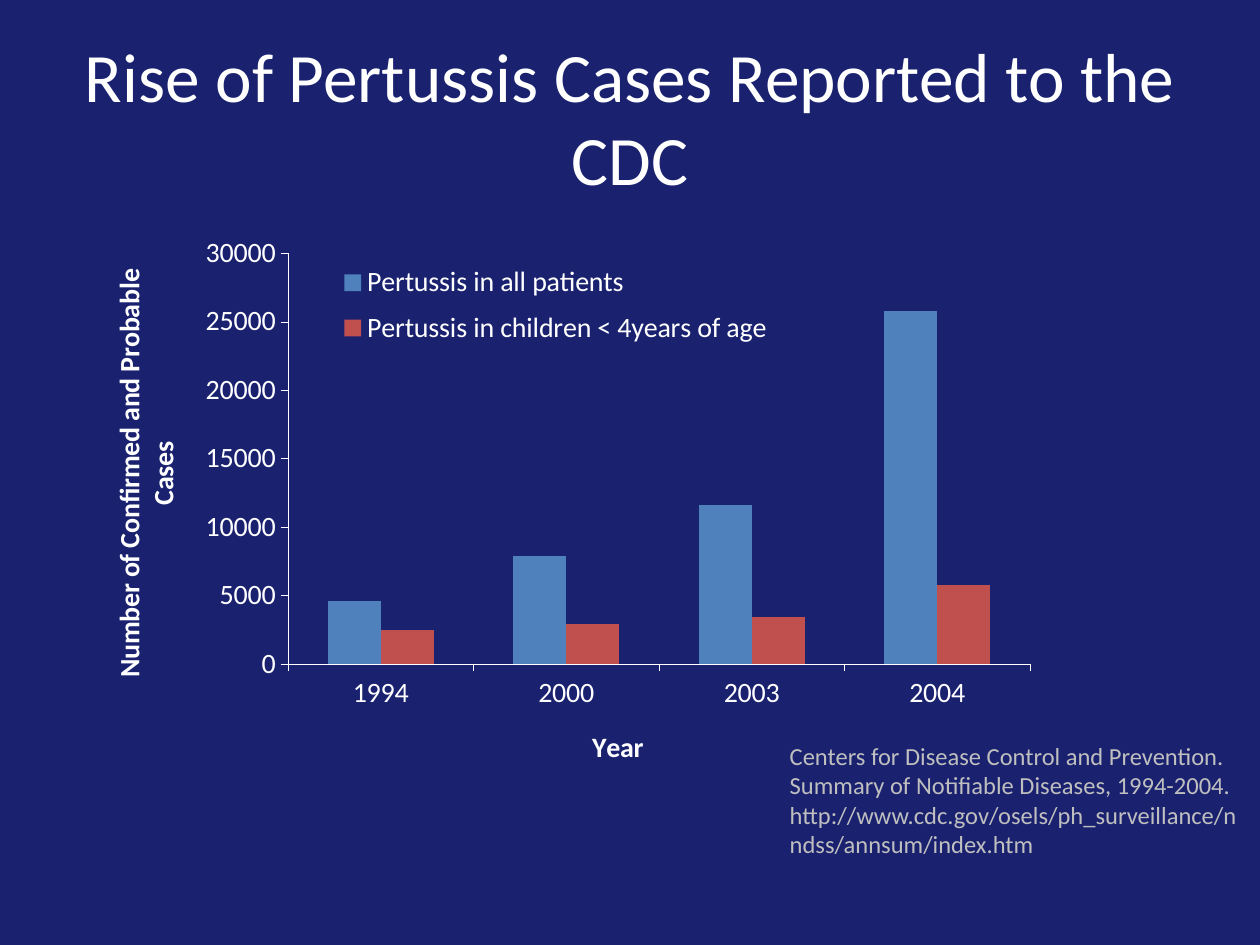
from typing import NamedTuple

from pptx import Presentation, util as u
from pptx.chart.data import CategoryChartData
from pptx.dml.color import RGBColor
from pptx.enum import chart as ch, text
from pptx.oxml import parse_xml
from pptx.oxml.ns import nsdecls

COLORS = {"bg": "1A2270", "text": "FFFFFF", "source": "BFBFBF",
          "all": "4F81BD", "children": "C0504D"}
FONT = "Calibri"


class Box(NamedTuple):
    x: float
    y: float
    w: float
    h: float


class Series(NamedTuple):
    name: str
    values: tuple
    color: str


YEARS = ("1994", "2000", "2003", "2004")
SERIES = (
    Series("Pertussis in all patients", (4600, 7900, 11600, 25800), "all"),
    Series("Pertussis in children < 4years of age", (2500, 2900, 3400, 5800), "children"),
)


def rgb(name: str) -> RGBColor:
    return RGBColor.from_string(COLORS[name])


def place(box: Box) -> list:
    return [u.Cm(v) for v in box]


def style(font, size: float, color: str) -> None:
    font.name, font.size = FONT, u.Pt(size)
    font.color.rgb = rgb(color)


def set_layout(parent, index: int, box: Box, target: str = "") -> None:
    for old in parent.xpath("c:layout"):
        parent.remove(old)
    inner = f'<c:layoutTarget val="{target}"/>' if target else ""
    modes = "".join(f'<c:{k}Mode val="edge"/>' for k in "xy")
    sizes = "".join(f'<c:{k} val="{v}"/>' for k, v in zip("xywh", box))
    parent.insert(index, parse_xml(
        f'<c:layout {nsdecls("c")}><c:manualLayout>{inner}{modes}{sizes}'
        "</c:manualLayout></c:layout>"))


def format_axis(axis, title: str) -> None:
    axis.has_major_gridlines = False
    axis.major_tick_mark = ch.XL_TICK_MARK.OUTSIDE
    axis.minor_tick_mark = ch.XL_TICK_MARK.NONE
    axis.format.line.color.rgb = rgb("text")
    axis.format.line.width = u.Pt(0.25)
    style(axis.tick_labels.font, 16, "text")
    tf = axis.axis_title.text_frame
    tf.text = title
    r = tf.paragraphs[0].runs[0]
    style(r.font, 16, "text")
    r.font.bold = True


def add_cases_chart(s, box: Box) -> None:
    data = CategoryChartData()
    data.categories = YEARS
    for row in SERIES:
        data.add_series(row.name, row.values)
    chart = s.shapes.add_chart(
        ch.XL_CHART_TYPE.COLUMN_CLUSTERED, *place(box), data).chart
    style(chart.font, 16, "text")
    chart.has_title = False
    plot = chart.plots[0]
    plot.gap_width, plot.overlap, plot.vary_by_categories = 150, 0, False
    for row, ser in zip(SERIES, plot.series):
        ser.format.fill.solid()
        ser.format.fill.fore_color.rgb = rgb(row.color)
    format_axis(chart.category_axis, "Year")
    chart.category_axis.tick_label_position = ch.XL_TICK_LABEL_POSITION.LOW
    format_axis(chart.value_axis, "Number of Confirmed and Probable Cases")
    chart.value_axis.minimum_scale, chart.value_axis.maximum_scale = 0, 30000
    chart.value_axis.major_unit = 5000
    chart.has_legend = True
    chart.legend.position = ch.XL_LEGEND_POSITION.RIGHT
    chart.legend.include_in_layout = False
    style(chart.legend.font, 16, "text")
    root = chart.element
    set_layout(root.xpath(".//c:plotArea")[0], 0, Box(0.187, 0.038, 0.757, 0.686), "inner")
    set_layout(root.xpath(".//c:legend")[0], 1, Box(0.2, 0.04, 0.52, 0.17))


def add_title(s, box: Box, words: str) -> None:
    sp = s.shapes.title
    sp.left, sp.top, sp.width, sp.height = place(box)
    tf = sp.text_frame
    tf.text = words
    tf.vertical_anchor = text.MSO_ANCHOR.MIDDLE
    p = tf.paragraphs[0]
    p.alignment = text.PP_ALIGN.CENTER
    style(p.runs[0].font, 39.6, "text")


def add_source(s, box: Box, words: str) -> None:
    tf = s.shapes.add_textbox(*place(box)).text_frame
    tf.word_wrap = True
    tf.auto_size = text.MSO_AUTO_SIZE.SHAPE_TO_FIT_TEXT
    tf.text = words
    style(tf.paragraphs[0].runs[0].font, 14, "source")


def main() -> None:
    """Build the pertussis cases slide."""
    prs = Presentation()
    prs.slide_width, prs.slide_height = u.Cm(25.4), u.Cm(19.05)
    s = prs.slides.add_slide(prs.slide_layouts[5])
    s.background.fill.solid()
    s.background.fill.fore_color.rgb = rgb("bg")
    add_title(s, Box(1.27, 0.76, 22.86, 3.18),
              "Rise of Pertussis Cases Reported to the CDC")
    add_source(s, Box(15.67, 14.81, 9.73, 2.74),
               "Centers for Disease Control and Prevention. "
               "Summary of Notifiable Diseases, 1994-2004. "
               "http://www.cdc.gov/osels/ph_surveillance/nndss/annsum/index.htm")
    add_cases_chart(s, Box(2.11, 4.65, 19.76, 12.07))
    prs.save("out.pptx")


if __name__ == "__main__":
    main()
